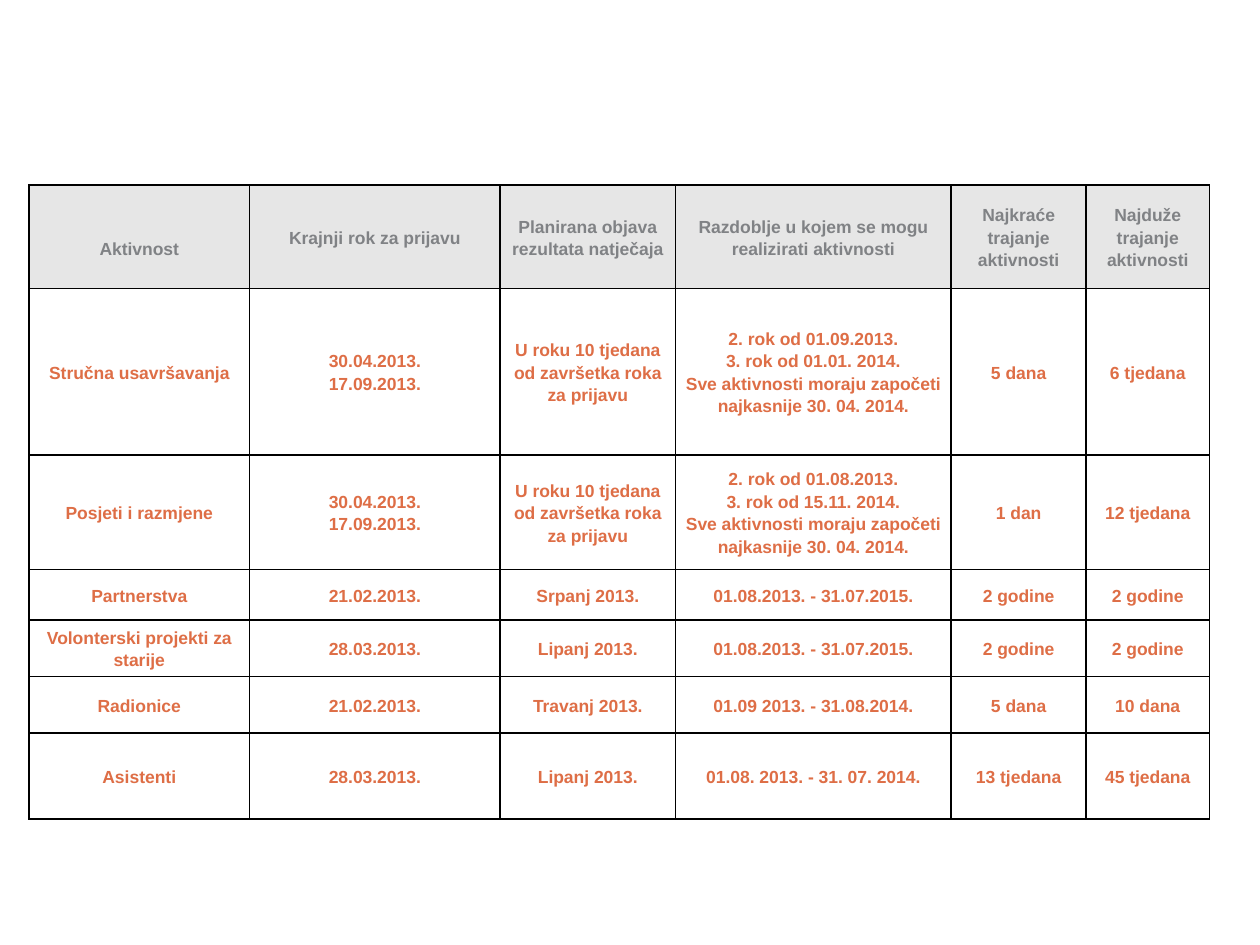
from lxml.etree import SubElement
from pptx import Presentation
from pptx.dml.color import RGBColor
from pptx.enum.text import MSO_ANCHOR, PP_ALIGN
from pptx.oxml.ns import qn
from pptx.util import Inches, Pt

GREY = RGBColor(0x80, 0x82, 0x85)
LIGHT_GREY = RGBColor(0xE6, 0xE6, 0xE6)
ORANGE = RGBColor(0xDE, 0x6E, 0x46)
BLACK = RGBColor(0x00, 0x00, 0x00)

COLUMN_WIDTHS = [1.75, 1.99, 1.39, 2.19, 1.07, 0.98]
ROW_HEIGHTS = [0.82, 1.32, 0.91, 0.4, 0.45, 0.45, 0.68]

TWO_DEADLINES = "30.04.2013.\n17.09.2013."
TEN_WEEKS = "U roku 10 tjedana od završetka roka za prijavu"
LATEST_START = "Sve aktivnosti moraju započeti najkasnije 30. 04. 2014."

ROWS = [
    ["Aktivnost", "Krajnji rok za prijavu", "Planirana objava rezultata natječaja",
     "Razdoblje u kojem se mogu realizirati aktivnosti",
     "Najkraće trajanje aktivnosti", "Najduže trajanje aktivnosti"],
    ["Stručna usavršavanja", TWO_DEADLINES, TEN_WEEKS,
     f"2. rok od 01.09.2013.\n3. rok od 01.01. 2014.\n{LATEST_START}",
     "5 dana", "6 tjedana"],
    ["Posjeti i razmjene", TWO_DEADLINES, TEN_WEEKS,
     f"2. rok od 01.08.2013.\n3. rok od 15.11. 2014.\n{LATEST_START}",
     "1 dan", "12 tjedana"],
    ["Partnerstva", "21.02.2013.", "Srpanj 2013.", "01.08.2013. - 31.07.2015.",
     "2 godine", "2 godine"],
    ["Volonterski projekti za starije", "28.03.2013.", "Lipanj 2013.",
     "01.08.2013. - 31.07.2015.", "2 godine", "2 godine"],
    ["Radionice", "21.02.2013.", "Travanj 2013.", "01.09 2013. - 31.08.2014.",
     "5 dana", "10 dana"],
    ["Asistenti", "28.03.2013.", "Lipanj 2013.", "01.08. 2013. - 31. 07. 2014.",
     "13 tjedana", "45 tjedana"],
]


def write_text(text_frame, text, color, size=10, bold=True, font="Arial",
               align=PP_ALIGN.CENTER, line_spacing=1.15):
    """Write one paragraph for each line of text."""
    text_frame.text = text
    for paragraph in text_frame.paragraphs:
        paragraph.alignment = align
        paragraph.line_spacing = line_spacing
        for run in paragraph.runs:
            run.font.name = font
            run.font.size = Pt(size)
            run.font.bold = bold
            run.font.color.rgb = color


def set_borders(cell, color=BLACK, width=1):
    """Outline a cell; call before its fill is set, as the XML order requires."""
    properties = cell._tc.get_or_add_tcPr()
    for side in ("lnL", "lnR", "lnT", "lnB"):
        line = SubElement(properties, qn(f"a:{side}"), w=str(Pt(width)))
        fill = SubElement(line, qn("a:solidFill"))
        SubElement(fill, qn("a:srgbClr"), val=str(color))


def format_cell(cell, text, is_header):
    cell.margin_left = cell.margin_right = Inches(0.07)
    cell.margin_top = cell.margin_bottom = 0
    cell.vertical_anchor = MSO_ANCHOR.MIDDLE
    set_borders(cell)
    if is_header:
        cell.fill.solid()
        cell.fill.fore_color.rgb = LIGHT_GREY
    else:
        cell.fill.background()
    write_text(cell.text_frame, text, GREY if is_header else ORANGE)


def add_schedule_table(slide, left, top):
    shape = slide.shapes.add_table(
        len(ROWS), len(COLUMN_WIDTHS), Inches(left), Inches(top),
        Inches(sum(COLUMN_WIDTHS)), Inches(sum(ROW_HEIGHTS)))
    table = shape.table
    table.horz_banding = False
    for column, width in zip(table.columns, COLUMN_WIDTHS):
        column.width = Inches(width)
    for row, height in zip(table.rows, ROW_HEIGHTS):
        row.height = Inches(height)
    for row_index, texts in enumerate(ROWS):
        for column_index, text in enumerate(texts):
            format_cell(table.cell(row_index, column_index), text, row_index == 0)
    # The first heading sits half a line lower than the others.
    table.cell(0, 0).margin_top = Inches(0.18)


def main():
    presentation = Presentation()
    presentation.slide_width = Inches(10)
    presentation.slide_height = Inches(7.5)
    slide = presentation.slides.add_slide(presentation.slide_layouts[6])
    add_schedule_table(slide, left=0.23, top=1.47)
    presentation.save("out.pptx")


if __name__ == "__main__":
    main()
